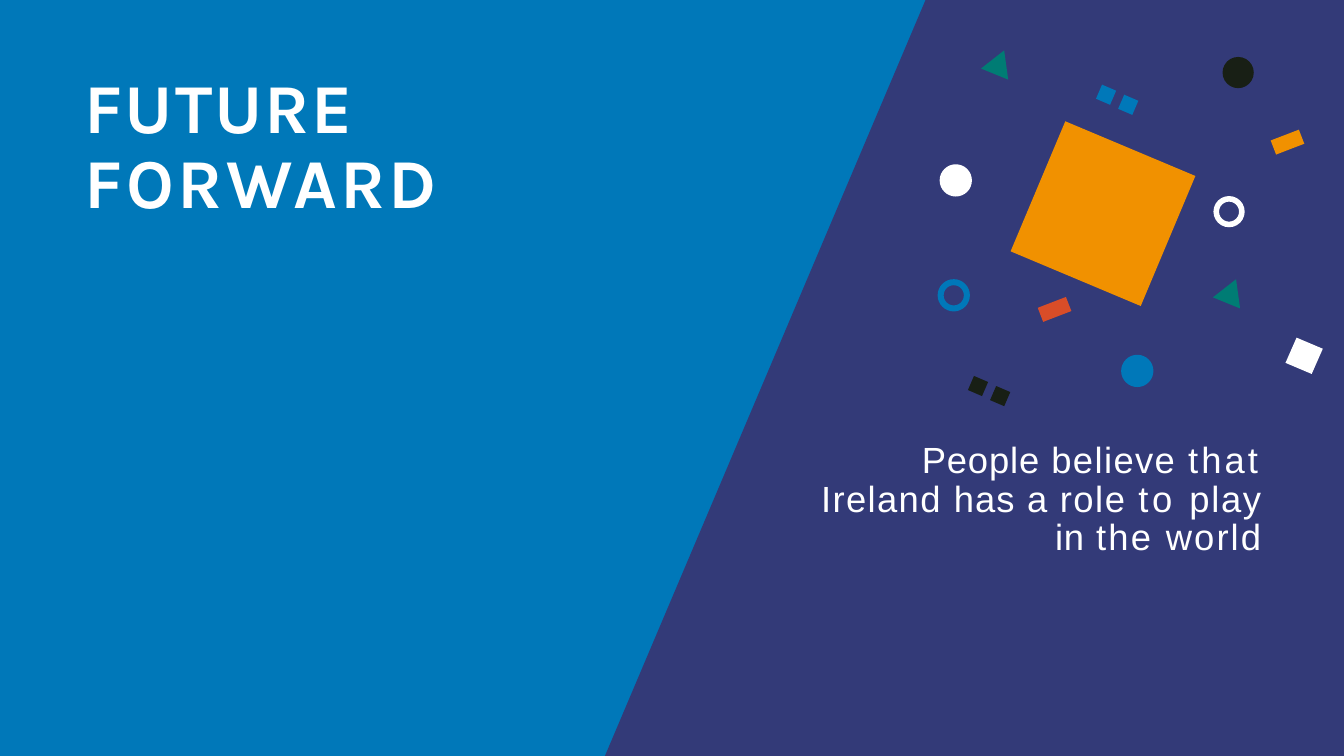
from math import cos, pi, sin

from pptx import Presentation
from pptx.dml.color import RGBColor
from pptx.enum.shapes import MSO_SHAPE as Shape
from pptx.enum.text import MSO_ANCHOR as Anchor, PP_ALIGN as Align
from pptx.util import Inches, Pt

WIDTH, HEIGHT = 13.33, 7.5
COLORS = {
    "blue": "0078B9", "navy": "333A78", "orange": "F19100", "black": "181F15",
    "white": "FFFFFF", "green": "007C74", "red": "D94D28",
}

TITLE = [[("FUTURE ", 1.4), ("FORWARD", 2.5)]]
MESSAGE = [
    [("People ", 0.6), ("believe ", 1), ("that ", 2.2), ("Ireland ", 1),
     ("has a ", 0.8), ("role ", 1.1), ("to ", 2.5), ("play", 1.2)],
    [("in ", 0.6), ("the ", 1.6), ("world", 1.5)],
]

KINDS = {
    "disc": (Shape.OVAL, 0.31, 0.31, 0),
    "ring": (Shape.DONUT, 0.31, 0.31, 0),
    "bar": (Shape.RECTANGLE, 0.3, 0.15, -21),
    "big square": (Shape.RECTANGLE, 1.4, 1.4, 22.8),
}
CONFETTI = [
    ("big square", "orange", 10.94, 2.12),
    ("disc", "black", 12.28, 0.72),
    ("ring", "white", 12.19, 2.1),
    ("bar", "orange", 12.77, 1.41),
    ("bar", "red", 10.46, 3.07),
]
RADIUS, HOLE, CIRCLE_STEPS = 0.16, 0.1, 32
SMALL_SQUARE = [(0.2, 0.06), (0.06, 0), (0, 0.14), (0.14, 0.2)]
SQUARE = [(0.37, 0.11), (0.11, 0), (0, 0.25), (0.26, 0.36)]
TRIANGLE = [(0.23, 0), (0, 0.18), (0.27, 0.29)]
NAVY_PANEL = [(9.18, 0), (6, HEIGHT), (WIDTH, HEIGHT), (WIDTH, 0)]


def circle(radius):
    angles = [2 * pi * step / CIRCLE_STEPS for step in range(CIRCLE_STEPS)]
    return [(radius * cos(angle), radius * sin(angle)) for angle in angles]


POLYGONS = [
    ("navy", [(NAVY_PANEL, 0, 0)]),
    ("green", [(TRIANGLE, 9.73, 0.5)]),
    ("green", [(TRIANGLE, 12.03, 2.77)]),
    ("blue", [(SMALL_SQUARE, 10.87, 0.84), (SMALL_SQUARE, 11.09, 0.94)]),
    ("black", [(SMALL_SQUARE, 9.6, 3.73), (SMALL_SQUARE, 9.82, 3.83)]),
    ("blue", [(circle(RADIUS), 9.46, 2.93), (circle(HOLE), 9.46, 2.93),
              (circle(RADIUS), 11.28, 3.68)]),
    ("white", [(circle(RADIUS), 9.48, 1.79), (SQUARE, 12.75, 3.35)]),
]


def paint(shape, color):
    shape.shadow.inherit = False
    shape.fill.solid()
    shape.fill.fore_color.rgb = RGBColor.from_string(COLORS[color])
    shape.line.fill.background()


def add_centered(slide, kind, color, x, y):
    preset, width, height, angle = KINDS[kind]
    shape = slide.shapes.add_shape(
        preset, Inches(x - width / 2), Inches(y - height / 2), Inches(width), Inches(height))
    shape.rotation = angle
    if kind == "ring":
        shape.adjustments[0] = 0.18
    paint(shape, color)


def add_polygon(slide, color, outlines):
    builder = None
    for points, left, top in outlines:
        corners = [(Inches(left + x), Inches(top + y)) for x, y in points]
        if builder is None:
            builder = slide.shapes.build_freeform(*corners[0])
        else:
            builder.move_to(*corners[0])
        builder.add_line_segments(corners[1:], close=True)
    paint(builder.convert_to_shape(), color)


def add_text(slide, box, paragraphs, font, size, leading, inset, align, bold=False):
    frame = slide.shapes.add_textbox(*map(Inches, box)).text_frame
    frame.word_wrap = True
    frame.vertical_anchor = Anchor.TOP
    frame.margin_left = frame.margin_right = frame.margin_bottom = 0
    frame.margin_top = Inches(inset)
    for index, pieces in enumerate(paragraphs):
        paragraph = frame.add_paragraph() if index else frame.paragraphs[0]
        paragraph.alignment = align
        paragraph.line_spacing = Pt(leading)
        paragraph.font.name = font
        paragraph.font.size = Pt(size)
        paragraph.font.bold = bold
        paragraph.font.color.rgb = RGBColor.from_string(COLORS["white"])
        for text, spacing in pieces:
            run = paragraph.add_run()
            run.text = text
            run.font._element.set("spc", str(round(spacing * 100)))


def main():
    presentation = Presentation()
    presentation.slide_width = Inches(WIDTH)
    presentation.slide_height = Inches(HEIGHT)
    slide = presentation.slides.add_slide(presentation.slide_layouts[6])

    backdrop = slide.shapes.add_shape(Shape.RECTANGLE, 0, 0, Inches(WIDTH), Inches(HEIGHT))
    paint(backdrop, "blue")
    for color, outlines in POLYGONS:
        add_polygon(slide, color, outlines)
    for kind, color, x, y in CONFETTI:
        add_centered(slide, kind, color, x, y)

    add_text(slide, (8.06, 4.31, 4.45, 1.24), MESSAGE, "Arial", 26, 27.8, 0.07, Align.RIGHT)
    add_text(slide, (0.84, 0.6, 3.95, 1.61), TITLE, "Karla", 50, 54, 0.11, Align.LEFT, bold=True)
    presentation.save("out.pptx")


if __name__ == "__main__":
    main()
